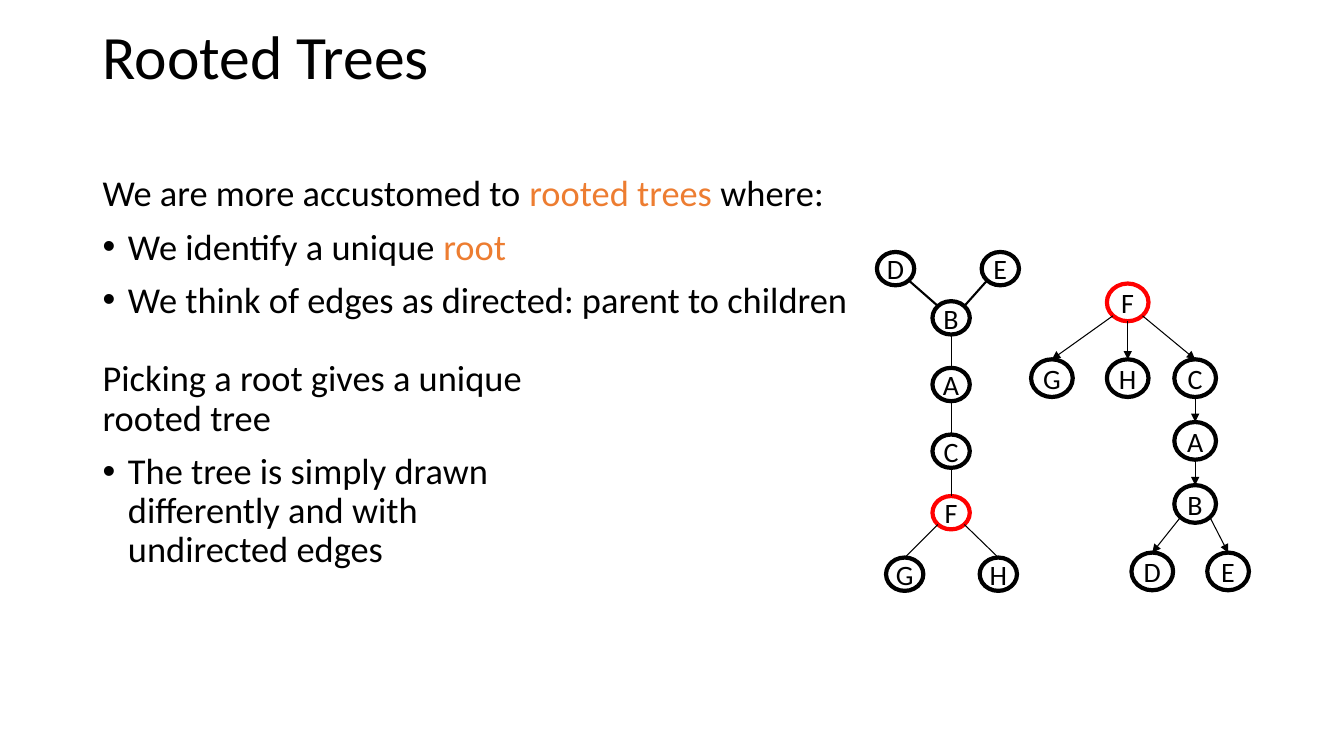
from lxml import etree
from pptx import Presentation
from pptx import util as u
from pptx.dml.color import RGBColor
from pptx.enum import shapes, text
from pptx.oxml.ns import qn

BLACK, RED, ORANGE = "000000", "FF0000", "ED7D31"
TOP, BOTTOM = (0, -1), (0, 1)
UPPER_LEFT, UPPER_RIGHT = (-0.71, -0.71), (0.71, -0.71)
LOWER_LEFT, LOWER_RIGHT = (-0.71, 0.71), (0.71, 0.71)

BODY = [
    (False, 0, [("We are more accustomed to ", BLACK), ("rooted trees ", ORANGE), ("where:", BLACK)]),
    (True, 10, [("We identify a unique ", BLACK), ("root", ORANGE)]),
    (True, 10, [("We think of edges as directed: parent to children", BLACK)]),
    (False, 28, [("Picking a root gives a unique \nrooted tree", BLACK)]),
    (True, 10, [("The tree is simply drawn \ndifferently and with \nundirected edges", BLACK)]),
]

FREE_NODES = {
    "D": (22.57, 6.77), "E": (25.21, 6.77), "B": (23.97, 8.01), "A": (23.97, 9.69),
    "C": (23.97, 11.37), "F": (23.97, 12.92), "G": (22.8, 14.47), "H": (25.16, 14.47),
}
FREE_EDGES = [
    ("D", LOWER_RIGHT, "B", UPPER_LEFT, 1.5), ("E", LOWER_LEFT, "B", UPPER_RIGHT, 1.5),
    ("B", BOTTOM, "A", TOP, 0.75), ("A", BOTTOM, "C", TOP, 0.75), ("C", BOTTOM, "F", TOP, 0.75),
    ("F", LOWER_LEFT, "G", TOP, 0.75), ("F", LOWER_RIGHT, "H", TOP, 0.75),
]
ROOTED_NODES = {
    "F": (28.42, 7.62), "G": (26.51, 9.53), "H": (28.42, 9.53), "C": (30.12, 9.53),
    "A": (30.12, 11.11), "B": (30.12, 12.7), "D": (29.04, 14.4), "E": (30.95, 14.4),
}
ROOTED_EDGES = [
    ("F", LOWER_LEFT, "G", TOP, 0.75), ("F", BOTTOM, "H", TOP, 0.75), ("F", LOWER_RIGHT, "C", TOP, 0.75),
    ("C", BOTTOM, "A", TOP, 0.75), ("A", BOTTOM, "B", TOP, 0.75),
    ("B", LOWER_LEFT, "D", TOP, 0.75), ("B", LOWER_RIGHT, "E", TOP, 0.75),
]


def rgb(value):
    return RGBColor.from_string(value)


def place(sp, left, top, width, height):
    sp.left, sp.top, sp.width, sp.height = map(u.Cm, (left, top, width, height))


def add_text(p, content, size=20, color=BLACK):
    for i, line in enumerate(content.split("\n")):
        if i:
            p.add_line_break()
        r = p.add_run()
        r.text = line
        r.font.name = "Calibri"
        r.font.size = u.Pt(size)
        r.font.color.rgb = rgb(color)


def set_bullet(p, bulleted):
    pPr = p._p.get_or_add_pPr()
    indent = u.Cm(0.64) if bulleted else 0
    pPr.set("marL", str(indent))
    pPr.set("indent", str(-indent))
    if bulleted:
        etree.SubElement(pPr, qn("a:buFont")).set("typeface", "Arial")
        etree.SubElement(pPr, qn("a:buChar")).set("char", "•")
    else:
        etree.SubElement(pPr, qn("a:buNone"))


def fill_title(sp, content):
    place(sp, 2.33, 0.41, 29.21, 2.18)
    tf = sp.text_frame
    tf.auto_size = text.MSO_AUTO_SIZE.NONE
    tf.vertical_anchor = text.MSO_ANCHOR.MIDDLE
    p = tf.paragraphs[0]
    p.alignment = text.PP_ALIGN.LEFT
    p.line_spacing = 0.9
    add_text(p, content, size=44)


def fill_body(sp, items):
    place(sp, 2.33, 4.29, 29.21, 12.09)
    tf = sp.text_frame
    tf.auto_size = text.MSO_AUTO_SIZE.NONE
    for i, (bulleted, before, parts) in enumerate(items):
        p = tf.add_paragraph() if i else tf.paragraphs[0]
        set_bullet(p, bulleted)
        p.line_spacing = 0.9
        p.space_before = u.Pt(before)
        for content, color in parts:
            add_text(p, content, size=26, color=color)


def add_node(s, label, x, y, width, height):
    sp = s.shapes.add_shape(shapes.MSO_SHAPE.OVAL, 0, 0, 0, 0)
    place(sp, x - width / 2, y - height / 2, width, height)
    sp.shadow.inherit = False
    sp.fill.background()
    sp.line.color.rgb = rgb(RED if label == "F" else BLACK)
    sp.line.width = u.Pt(3)
    tf = sp.text_frame
    tf.word_wrap = False
    tf.vertical_anchor = text.MSO_ANCHOR.MIDDLE
    p = tf.paragraphs[0]
    p.alignment = text.PP_ALIGN.CENTER
    add_text(p, label)


def add_edge(s, start, end, weight, directed):
    points = [u.Cm(value) for value in (*start, *end)]
    cxn = s.shapes.add_connector(shapes.MSO_CONNECTOR.STRAIGHT, *points)
    cxn.line.color.rgb = rgb(BLACK)
    cxn.line.width = u.Pt(weight)
    spPr = cxn._element.spPr
    if directed:
        etree.SubElement(spPr.find(qn("a:ln")), qn("a:tailEnd")).set("type", "triangle")
    etree.SubElement(spPr, qn("a:effectLst"))


def add_tree(s, nodes, edges, width, height, directed):
    def rim(label, side):
        (x, y), (dx, dy) = nodes[label], side
        return x + dx * width / 2, y + dy * height / 2

    for label, (x, y) in nodes.items():
        add_node(s, label, x, y, width, height)
    for parent, parent_side, child, child_side, weight in edges:
        add_edge(s, rim(parent, parent_side), rim(child, child_side), weight, directed)


def main():
    prs = Presentation()
    prs.slide_width, prs.slide_height = u.Cm(33.87), u.Cm(19.05)
    s = prs.slides.add_slide(prs.slide_layouts[1])
    fill_title(s.shapes.title, "Rooted Trees")
    fill_body(s.placeholders[1], BODY)
    add_tree(s, FREE_NODES, FREE_EDGES, 0.94, 0.84, directed=False)
    add_tree(s, ROOTED_NODES, ROOTED_EDGES, 1.05, 0.95, directed=True)
    prs.save("out.pptx")


if __name__ == "__main__":
    main()
